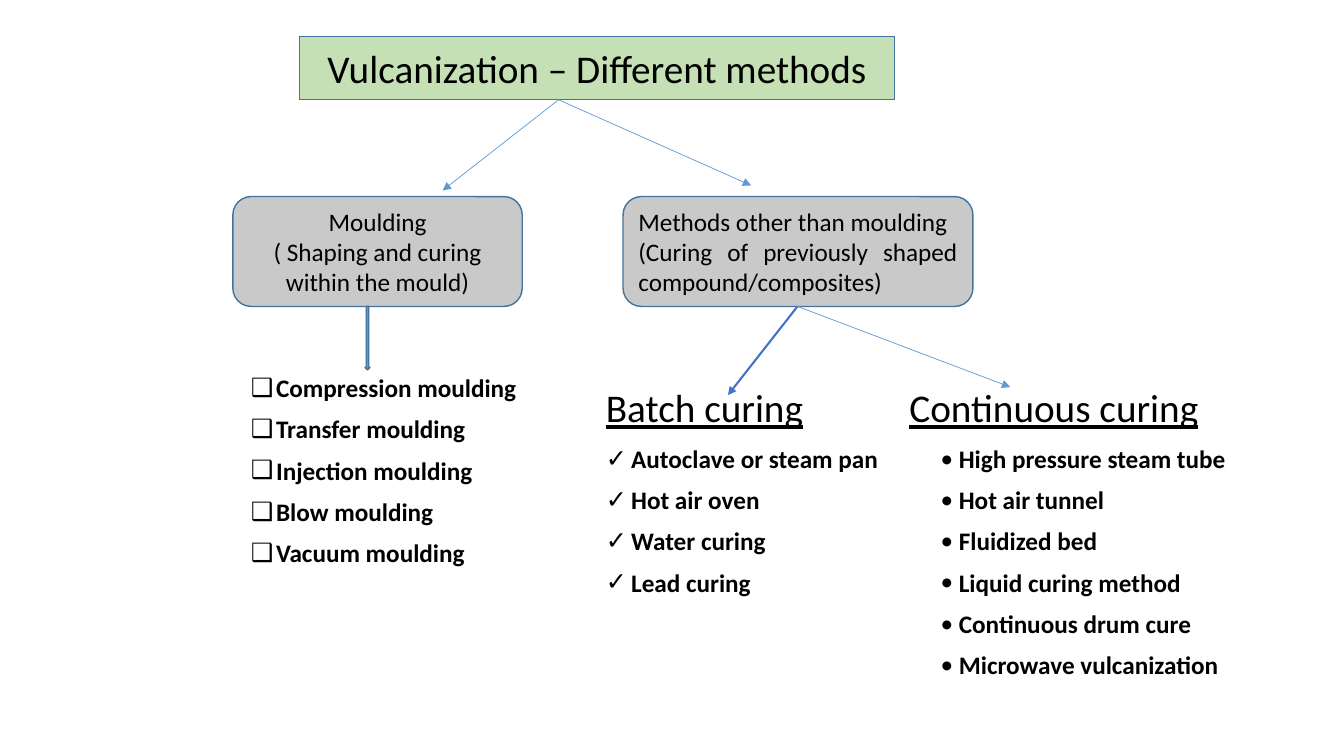
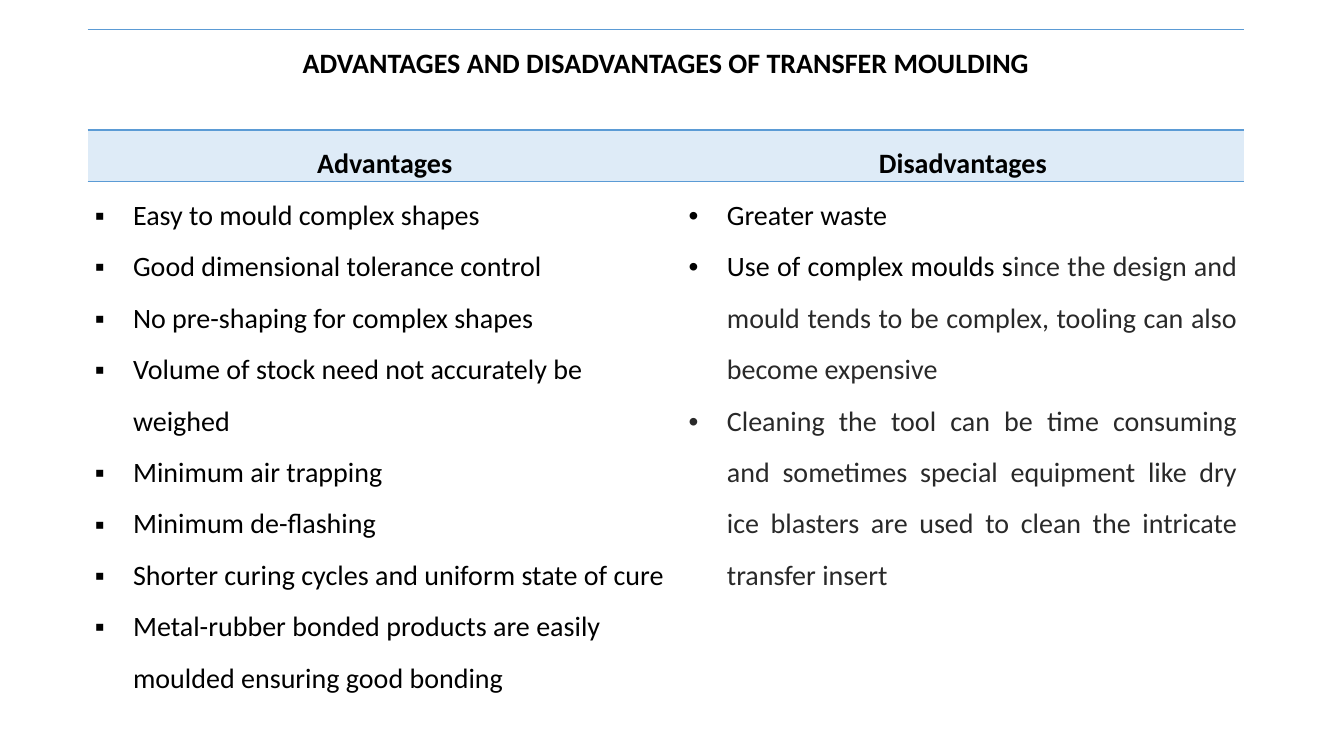
from lxml import etree
from pptx import Presentation
from pptx import util as u
from pptx.dml.color import RGBColor
from pptx.enum import shapes, text
from pptx.oxml import ns

FONT = "Calibri"
BLACK = RGBColor(0x00, 0x00, 0x00)
CHARCOAL = RGBColor(0x29, 0x29, 0x29)
GREEN = RGBColor(0xC5, 0xE0, 0xB4)
GREY = RGBColor(0xC9, 0xC9, 0xC9)
OUTLINE = RGBColor(0x43, 0x73, 0x9E)
BLUE = RGBColor(0x5B, 0x9B, 0xD5)
STRONG_BLUE = RGBColor(0x44, 0x72, 0xC4)
PALE_BLUE = RGBColor(0xDE, 0xEB, 0xF7)
NO_TABLE_STYLE = "{2D5ABB26-0587-4C30-8999-92F81FD0307C}"
LEFT, CENTER, JUSTIFY = text.PP_ALIGN.LEFT, text.PP_ALIGN.CENTER, text.PP_ALIGN.JUSTIFY

MOULDING = ["Compression moulding", "Transfer moulding", "Injection moulding",
            "Blow moulding", "Vacuum moulding"]
BATCH = ["Autoclave or steam pan", "Hot air oven", "Water curing", "Lead curing"]
CONTINUOUS = ["High pressure steam tube", "Hot air tunnel", "Fluidized bed",
              "Liquid curing method", "Continuous drum cure", "Microwave vulcanization"]
ADVANTAGES = [
    "Easy to mould complex shapes",
    "Good dimensional tolerance control",
    "No pre-shaping for complex shapes",
    "Volume of stock need not accurately be weighed",
    "Minimum air trapping",
    "Minimum de-flashing",
    "Shorter curing cycles and uniform state of cure",
    "Metal-rubber bonded products are easily moulded ensuring good bonding",
]
DISADVANTAGES = [
    "Greater waste",
    "Use of complex moulds s",
    "Cleaning the tool can be time consuming and sometimes special equipment like dry "
    "ice blasters are used to clean the intricate transfer insert",
]
TOOLING_COST = ("ince the design and mould tends to be complex, "
                "tooling can also become expensive")


def format_span(span, size, bold=False, underline=False, color=BLACK):
    span.font.name = FONT
    span.font.size = u.Pt(size)
    span.font.bold = bold
    span.font.underline = underline
    span.font.color.rgb = color


def write(frame, lines, size, align=LEFT, spacing=1.0, before=0, **style):
    frame.text = "\n".join(lines)
    for para in frame.paragraphs:
        para.alignment = align
        para.line_spacing = spacing
        para.space_before = u.Pt(before)
        for span in para.runs:
            format_span(span, size, **style)


def add_bullets(frame, mark, hang, face=FONT):
    for para in frame.paragraphs:
        props = para._p.get_or_add_pPr()
        props.set("marL", str(u.Inches(hang)))
        props.set("indent", str(-u.Inches(hang)))
        etree.SubElement(props, ns.qn("a:buFont")).set("typeface", face)
        etree.SubElement(props, ns.qn("a:buChar")).set("char", mark)


def place(box, left, top, width, height):
    box.left, box.top = u.Inches(left), u.Inches(top)
    box.width, box.height = u.Inches(width), u.Inches(height)
    frame = box.text_frame
    frame.word_wrap = True
    frame.auto_size = text.MSO_AUTO_SIZE.NONE
    frame.vertical_anchor = text.MSO_ANCHOR.TOP
    return frame


def paint(box, fill):
    box.fill.solid()
    box.fill.fore_color.rgb = fill
    box.line.color.rgb = OUTLINE
    box.line.width = u.Pt(1)


def add_box(slide, kind, area, fill):
    box = slide.shapes.add_shape(kind, *map(u.Inches, area))
    box.shadow.inherit = False
    paint(box, fill)
    return box


def add_method(slide, area, lines, align):
    box = add_box(slide, shapes.MSO_SHAPE.ROUNDED_RECTANGLE, area, GREY)
    box.text_frame.vertical_anchor = text.MSO_ANCHOR.MIDDLE
    write(box.text_frame, lines, 18, align)


def add_arrow(slide, start, end, color=BLUE, width=0.5):
    arrow = slide.shapes.add_connector(
        shapes.MSO_CONNECTOR.STRAIGHT, *map(u.Inches, start + end))
    arrow.line.color.rgb = color
    arrow.line.width = u.Pt(width)
    etree.SubElement(arrow.line._get_or_add_ln(), ns.qn("a:tailEnd")).set("type", "triangle")
    etree.SubElement(arrow._element.spPr, ns.qn("a:effectLst"))


def add_list(box, area, items, mark, hang):
    frame = place(box, *area)
    write(frame, items, 18, spacing=0.9, before=10, bold=True)
    add_bullets(frame, mark, hang)


def add_heading(box, area, label):
    write(place(box, *area), [label], 28, spacing=0.9, underline=True)


def build_methods(deck):
    slide = deck.slides.add_slide(deck.slide_layouts.get_by_name("Comparison"))
    title, batch_head, batch_list, continuous_head, continuous_list = slide.placeholders

    frame = place(title, 2.97, 0.36, 5.9, 0.63)
    frame.vertical_anchor = text.MSO_ANCHOR.MIDDLE
    paint(title, GREEN)
    write(frame, ["Vulcanization – Different methods"], 28, CENTER)

    add_method(slide, (2.31, 1.95, 2.87, 1.09),
               ["Moulding", "( Shaping and curing", "within the mould)"], CENTER)
    add_method(slide, (6.18, 1.95, 3.47, 1.09),
               ["Methods other than moulding",
                "(Curing of previously shaped compound/composites)"], JUSTIFY)

    moulding_list = slide.shapes.add_textbox(0, 0, 0, 0)
    add_list(moulding_list, (2.39, 3.68, 3.1, 2.2), MOULDING, "❑", 0.25)
    add_heading(batch_head, (5.91, 3.81, 3, 0.55), "Batch curing")
    add_list(batch_list, (5.91, 4.38, 3, 1.8), BATCH, "✓", 0.25)
    add_heading(continuous_head, (8.92, 3.81, 3.3, 0.55), "Continuous curing")
    add_list(continuous_list, (9.23, 4.38, 3.3, 2.6), CONTINUOUS, "•", 0.18)

    title_foot, other_foot = (5.54, 0.99), (7.91, 3.04)
    add_arrow(slide, title_foot, (4.39, 1.89))
    add_arrow(slide, title_foot, (7.45, 1.84))
    add_box(slide, shapes.MSO_SHAPE.DOWN_ARROW, (3.62, 3.04, 0.05, 0.63), BLUE)
    add_arrow(slide, other_foot, (7.22, 3.92), STRONG_BLUE, 1.5)
    add_arrow(slide, other_foot, (10.02, 3.84))


def add_rules(cell, edges):
    props = cell._tc.get_or_add_tcPr()
    for index, edge in enumerate(edges):
        rule = etree.Element(ns.qn("a:" + edge), w=str(u.Pt(1)))
        fill = etree.SubElement(rule, ns.qn("a:solidFill"))
        etree.SubElement(fill, ns.qn("a:srgbClr")).set("val", str(BLUE))
        props.insert(index, rule)


def add_plain_table(slide, left, top, widths, heights):
    frame = slide.shapes.add_table(
        len(heights), len(widths), u.Inches(left), u.Inches(top),
        u.Inches(sum(widths)), u.Inches(sum(heights)))
    table = frame.table
    table.first_row = table.horz_banding = False
    table._tbl.tblPr.find(ns.qn("a:tableStyleId")).text = NO_TABLE_STYLE
    for column, width in zip(table.columns, widths):
        column.width = u.Inches(width)
    for row, height in zip(table.rows, heights):
        row.height = u.Inches(height)
    for cell in table.iter_cells():
        cell.margin_left = cell.margin_right = u.Inches(0.07)
        cell.margin_top = cell.margin_bottom = 0
        cell.fill.background()
    return table


def build_comparison(deck):
    slide = deck.slides.add_slide(deck.slide_layouts.get_by_name("Blank"))
    table = add_plain_table(slide, 0.87, 0.29, (5.89, 5.58), (1, 0.51, 5.6))

    heading = table.cell(0, 0)
    heading.merge(table.cell(0, 1))
    write(heading.text_frame, ["ADVANTAGES AND DISADVANTAGES OF TRANSFER MOULDING"],
          20, CENTER, 1.5, bold=True)

    columns = [("Advantages", ADVANTAGES, LEFT, "▪"),
               ("Disadvantages", DISADVANTAGES, JUSTIFY, "•")]
    for index, (label, items, align, mark) in enumerate(columns):
        add_rules(table.cell(0, index), ("lnT", "lnB"))
        band = table.cell(1, index)
        band.fill.solid()
        band.fill.fore_color.rgb = PALE_BLUE
        add_rules(band, ("lnT",))
        write(band.text_frame, [label], 20, CENTER, 1.5, bold=True)
        frame = table.cell(2, index).text_frame
        write(frame, items, 20, align, 1.5)
        add_bullets(frame, mark, 0.38, "Arial")

    waste, moulds, cleaning = table.cell(2, 1).text_frame.paragraphs
    span = moulds.add_run()
    span.text = TOOLING_COST
    for grey_span in (span, cleaning.runs[0]):
        format_span(grey_span, 20, color=CHARCOAL)


def main():
    deck = Presentation()
    deck.slide_width, deck.slide_height = u.Inches(13.33), u.Inches(7.5)
    build_methods(deck)
    build_comparison(deck)
    deck.save("out.pptx")


if __name__ == "__main__":
    main()
